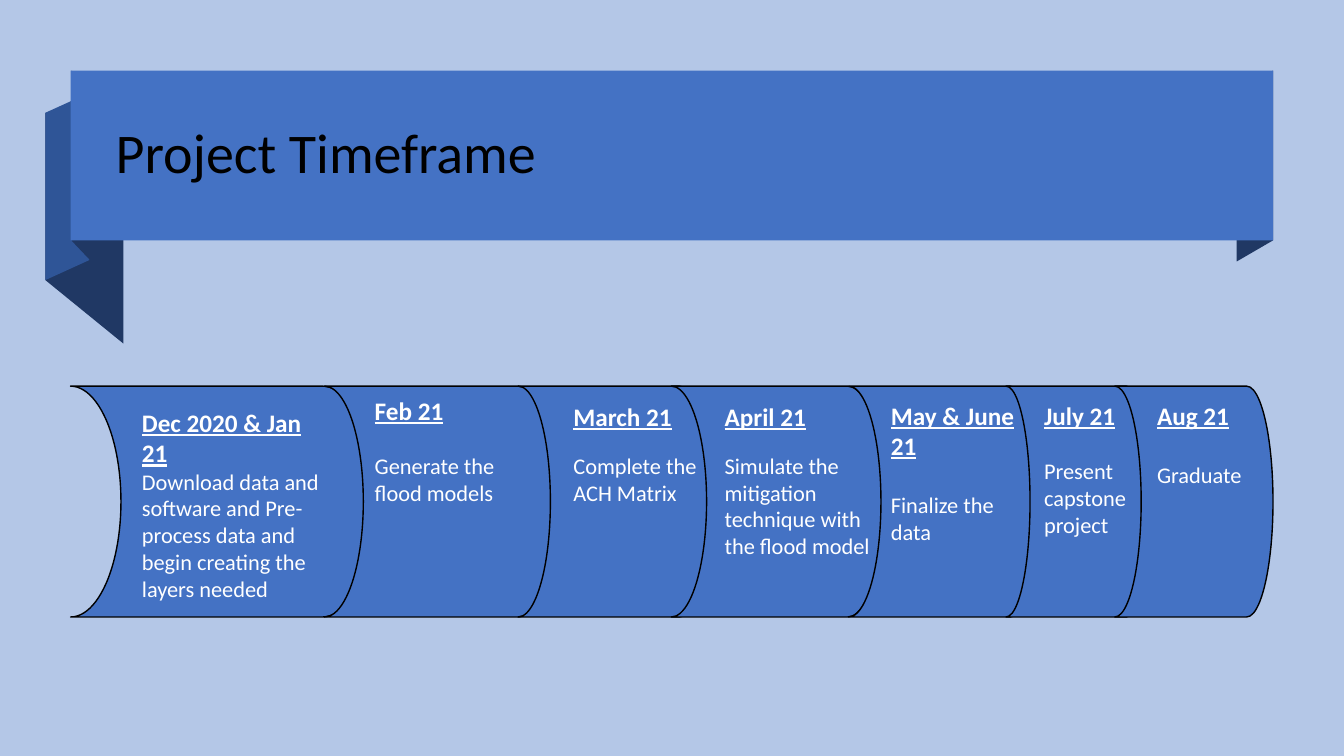
import pptx
import pptx.dml.color
import pptx.enum.shapes
import pptx.enum.text
import pptx.util

Pt = pptx.util.Pt
RGBColor = pptx.dml.color.RGBColor
Preset = pptx.enum.shapes.MSO_SHAPE
Anchor = pptx.enum.text.MSO_ANCHOR
AutoSize = pptx.enum.text.MSO_AUTO_SIZE

PALE_BLUE = RGBColor(0xB4, 0xC7, 0xE7)
BLUE = RGBColor(0x44, 0x72, 0xC4)
MID_BLUE = RGBColor(0x2F, 0x55, 0x97)
NAVY = RGBColor(0x20, 0x38, 0x64)
BLACK = RGBColor(0, 0, 0)
WHITE = RGBColor(0xFF, 0xFF, 0xFF)

BAND_TOP, BAND_HEIGHT = 275.8, 164.9

FOLDS = [
    (NAVY, 32.4, 80.6, 88.2, 126, 119.5),
    (MID_BLUE, 32.4, 80.6, 64.1, 66.2, 119.5),
    (NAVY, 51.1, 50.4, 64.1, 64.1, 121.5),
    (NAVY, 883.4, 65.5, 909.4, 50.4, 121.3),
]

BANDS = [(50.4, 216), (231.8, 166.3), (370.1, 138.2), (479.5, 151.2),
         (606.2, 138.2), (718.6, 103), (796.3, 113)]

MILESTONES = [
    (94.3, 287.3, 146.2, 147.6, "Dec 2020 & Jan 21", 0,
     "Download data and software and Pre-process data and begin creating the layers needed"),
    (260.6, 278.6, 109.4, 87.1, "Feb 21", 19.5, "Generate the flood models"),
    (402.5, 283, 128.9, 82.1, "March 21", 14.6, "Complete the ACH Matrix"),
    (510.5, 283, 128.9, 121, "April 21", 14.6,
     "Simulate the mitigation technique with the flood model"),
    (629.3, 282.2, 103, 111.6, "May & June 21", 22, "Finalize the data"),
    (738.7, 282.2, 98.6, 106.6, "July 21", 19.5, "Present capstone project"),
    (819.4, 282.2, 128.9, 70.6, "Aug 21", 22, "Graduate"),
]


class TimelineSlide:
    font = "Calibri"

    def __init__(self, page):
        self.page = page
        page.background.fill.solid()
        page.background.fill.fore_color.rgb = PALE_BLUE

    def paint(self, shape, color, outlined=False):
        shape.shadow.inherit = False
        shape.fill.solid()
        shape.fill.fore_color.rgb = color
        if outlined:
            shape.line.color.rgb = BLACK
            shape.line.width = Pt(1)
        else:
            shape.line.fill.background()

    def fold(self, color, left, left_top, right, right_top, height):
        corners = [(left, left_top), (right, right_top),
                   (right, right_top + height), (left, left_top + height)]
        points = [(Pt(x), Pt(y)) for x, y in corners]
        outline = self.page.shapes.build_freeform(*points[0], scale=1.0)
        outline.add_line_segments(points[1:], close=True)
        self.paint(outline.convert_to_shape(), color)

    def banner(self, left, top, width, height):
        shape = self.page.shapes.add_shape(
            Preset.RECTANGLE, Pt(left), Pt(top), Pt(width), Pt(height))
        self.paint(shape, BLUE)

    def band(self, left, width):
        shape = self.page.shapes.add_shape(
            Preset.FLOWCHART_STORED_DATA,
            Pt(left), Pt(BAND_TOP), Pt(width), Pt(BAND_HEIGHT))
        shape.rotation = 180
        self.paint(shape, BLUE, outlined=True)

    def text_frame(self, left, top, width, height):
        box = self.page.shapes.add_textbox(Pt(left), Pt(top), Pt(width), Pt(height))
        box.text_frame.word_wrap = True
        return box.text_frame

    def set_text(self, para, text, size, color, heading=False):
        para.text = text
        para.font.name = self.font
        para.font.size = Pt(size)
        para.font.color.rgb = color
        para.font.bold = heading
        para.font.underline = heading

    def title(self, text, left, top, width, height):
        frame = self.text_frame(left, top, width, height)
        frame.vertical_anchor = Anchor.MIDDLE
        para = frame.paragraphs[0]
        para.line_spacing = 0.9
        self.set_text(para, text, 40, BLACK)

    def milestone(self, left, top, width, height, date, gap, task):
        frame = self.text_frame(left, top, width, height)
        frame.auto_size = AutoSize.SHAPE_TO_FIT_TEXT
        self.set_text(frame.paragraphs[0], date, 18, WHITE, heading=True)
        para = frame.add_paragraph()
        para.space_before = Pt(gap)
        self.set_text(para, task, 16, WHITE)


def main():
    deck = pptx.Presentation()
    deck.slide_width, deck.slide_height = Pt(960), Pt(540)
    timeline = TimelineSlide(deck.slides.add_slide(deck.slide_layouts[6]))
    for fold in FOLDS:
        timeline.fold(*fold)
    timeline.banner(50.4, 50.4, 859, 121.3)
    timeline.title("Project Timeframe", 75.6, 63.4, 808.6, 95.8)
    for band in BANDS:
        timeline.band(*band)
    for milestone in MILESTONES:
        timeline.milestone(*milestone)
    deck.save("out.pptx")


if __name__ == "__main__":
    main()
